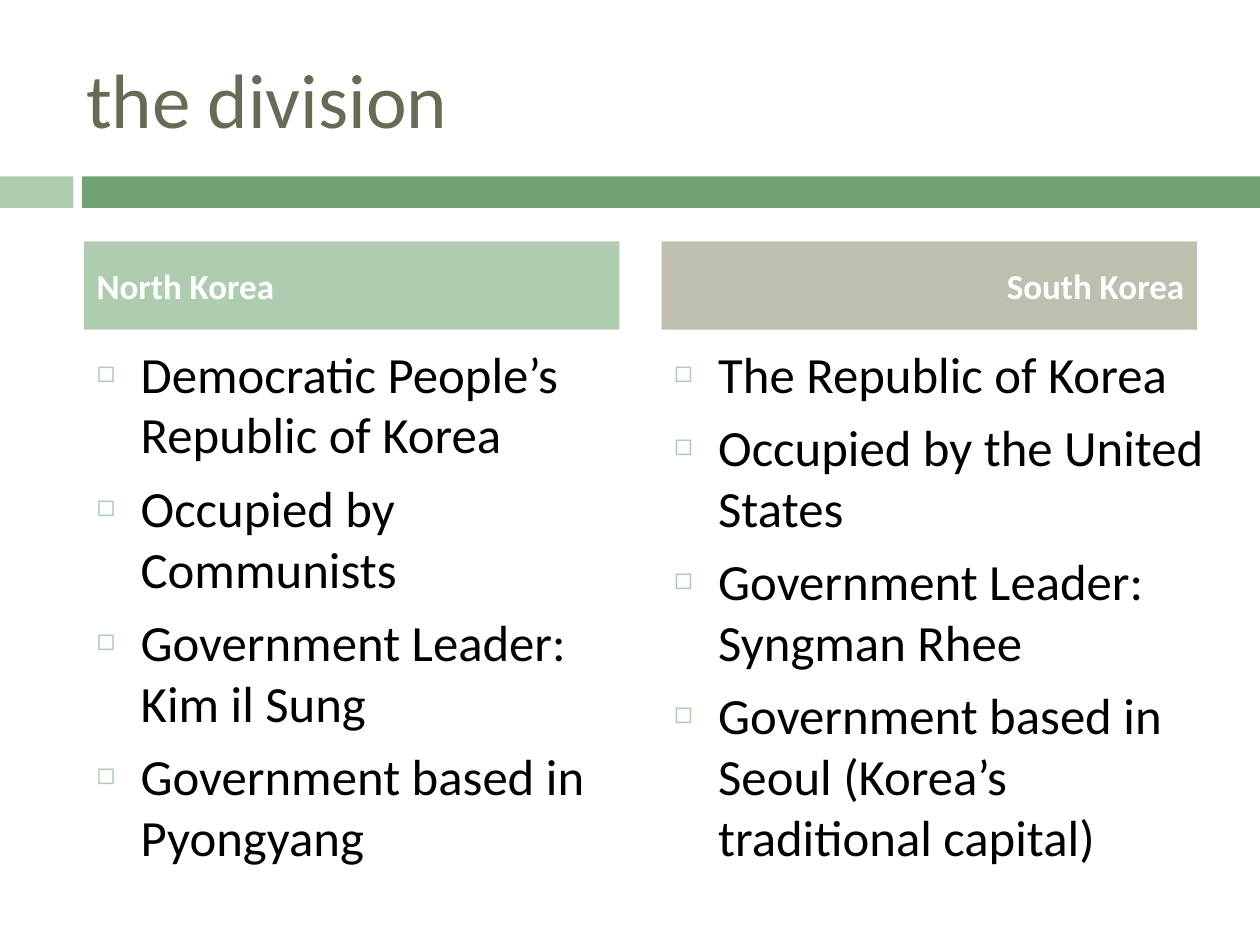
from lxml.etree import SubElement
from pptx import Presentation
from pptx.dml.color import RGBColor
from pptx.enum.shapes import MSO_SHAPE
from pptx.enum.text import MSO_ANCHOR, MSO_AUTO_SIZE, PP_ALIGN
from pptx.oxml.ns import qn
from pptx.util import Inches, Pt

SAGE = RGBColor(0xB0, 0xCC, 0xB0)
GREEN = RGBColor(0x72, 0xA3, 0x76)
STONE = RGBColor(0xC0, 0xBE, 0xAF)
OLIVE = RGBColor(0x67, 0x6A, 0x55)
BLACK = RGBColor(0, 0, 0)
WHITE = RGBColor(255, 255, 255)

# The slide is a grid of 120 columns by 90 rows
CELL = Inches(10) // 120
COMPARISON_LAYOUT = 4


class ComparisonSlide:
    font_name = "Calibri"
    title_format = {"size": Pt(44), "bold": False}
    header_format = {"size": Pt(20), "bold": True}
    list_format = {"size": Pt(29), "bold": False}
    space_before = Pt(7)
    indent = Inches(0.35)

    def __init__(self, presentation):
        layout = presentation.slide_layouts[COMPARISON_LAYOUT]
        self.slide = presentation.slides.add_slide(layout)

    def place(self, shape, box):
        for name, cells in zip(("left", "top", "width", "height"), box):
            setattr(shape, name, round(cells * CELL))

    def fill_placeholder(self, index, box, lines, formats, color, anchor,
                         alignment=PP_ALIGN.LEFT, space_before=Pt(0)):
        shape = self.slide.placeholders[index]
        self.place(shape, box)
        frame = shape.text_frame
        frame.text = "\n".join(lines)
        frame.word_wrap = True
        frame.auto_size = MSO_AUTO_SIZE.NONE
        frame.vertical_anchor = anchor
        for paragraph in frame.paragraphs:
            paragraph.alignment = alignment
            paragraph.space_before = space_before
            font = paragraph.runs[0].font
            for name, value in {"name": self.font_name, **formats}.items():
                setattr(font, name, value)
            font.color.rgb = color
        return shape

    def bar(self, box, color):
        shape = self.slide.shapes.add_shape(MSO_SHAPE.RECTANGLE, 0, 0, 0, 0)
        self.place(shape, box)
        shape.fill.solid()
        shape.fill.fore_color.rgb = color
        shape.line.fill.background()
        shape.shadow.inherit = False

    def title(self, box, text):
        self.fill_placeholder(0, box, [text], self.title_format, OLIVE,
                              MSO_ANCHOR.MIDDLE)

    def header(self, index, box, text, color, alignment):
        shape = self.fill_placeholder(index, box, [text], self.header_format, WHITE,
                                      MSO_ANCHOR.MIDDLE, alignment, self.space_before)
        shape.fill.solid()
        shape.fill.fore_color.rgb = color

    def bullet_list(self, index, box, lines):
        shape = self.fill_placeholder(index, box, lines, self.list_format, BLACK,
                                      MSO_ANCHOR.TOP, space_before=self.space_before)
        for paragraph in shape.text_frame.paragraphs:
            properties = paragraph._p.get_or_add_pPr()
            properties.set("marL", str(self.indent))
            properties.set("indent", str(-self.indent))
            bullet_color = SubElement(properties, qn("a:buClr"))
            SubElement(bullet_color, qn("a:srgbClr"), val=str(SAGE))
            SubElement(properties, qn("a:buSzPct"), val="60000")
            SubElement(properties, qn("a:buChar"), char="◻")


def main():
    presentation = Presentation()
    presentation.slide_width = 120 * CELL
    presentation.slide_height = 90 * CELL
    page = ComparisonSlide(presentation)

    # Title and the band below it
    page.bar((0, 16.8, 7, 3), SAGE)
    page.bar((7.8, 16.8, 112.2, 3), GREEN)
    page.title((7, 3.6, 107, 11.4), "the division")

    # One column per country: left, header colour, alignment, list size, text
    countries = [
        (8, SAGE, PP_ALIGN.LEFT, (51, 47), "North Korea", [
            "Democratic People’s Republic of Korea",
            "Occupied by Communists",
            "Government Leader: Kim il Sung",
            "Government based in Pyongyang",
        ]),
        (63, STONE, PP_ALIGN.RIGHT, (53, 52), "South Korea", [
            "The Republic of Korea",
            "Occupied by the United States",
            "Government Leader: Syngman Rhee",
            "Government based in Seoul (Korea’s traditional capital)",
        ]),
    ]
    for number, (left, color, alignment, size, name, facts) in enumerate(countries):
        header_index = 1 + 2 * number
        page.bullet_list(header_index + 1, (left, 32, *size), facts)
        page.header(header_index, (left, 23, 51, 8.4), name, color, alignment)

    presentation.save("out.pptx")


if __name__ == "__main__":
    main()
